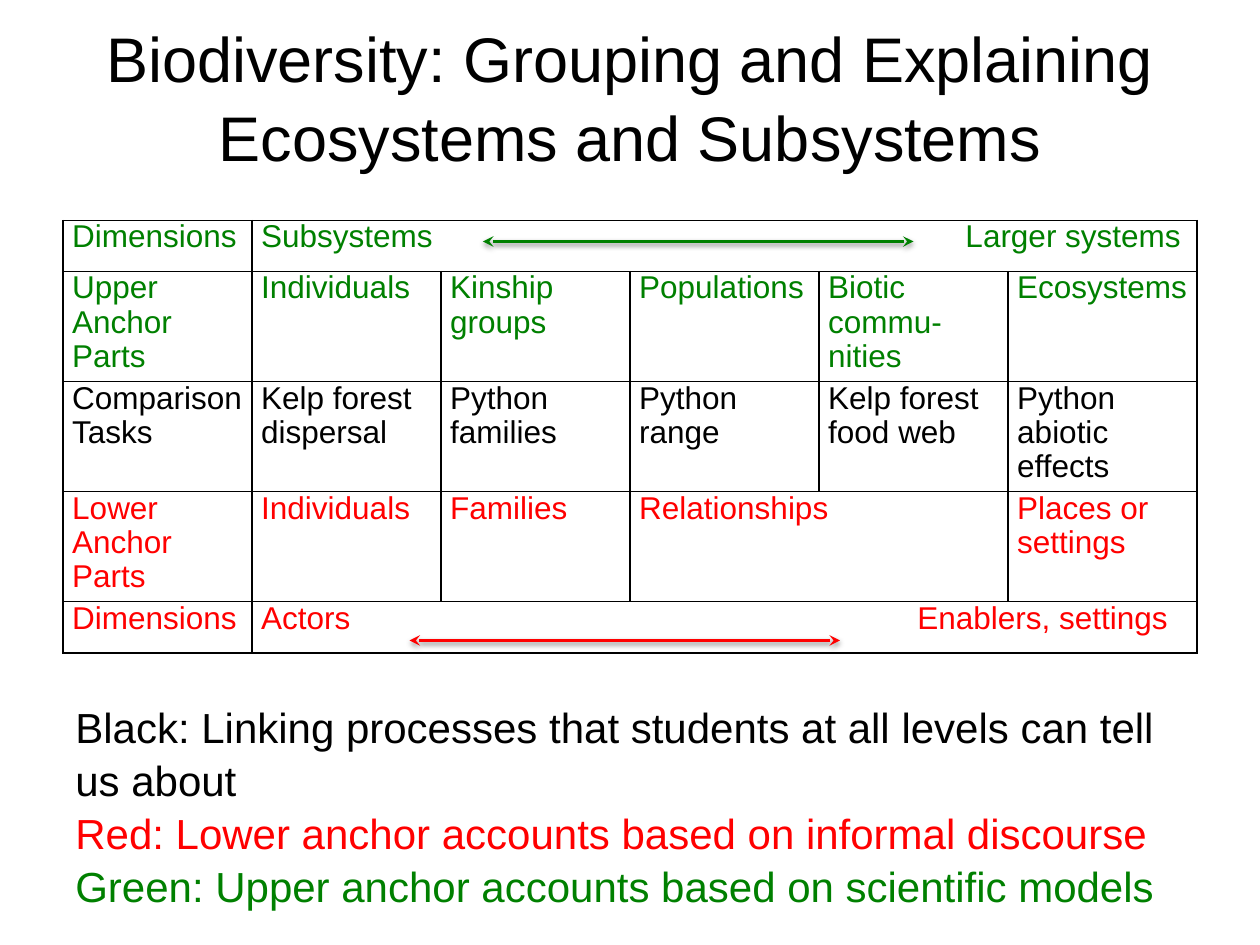
"""Build a slide that compares upper and lower anchor views of biodiversity."""
from lxml.etree import SubElement
from pptx import Presentation
from pptx.dml.color import RGBColor
from pptx.enum.shapes import MSO_CONNECTOR
from pptx.enum.text import MSO_ANCHOR, PP_ALIGN
from pptx.oxml import parse_xml
from pptx.oxml.ns import nsdecls, qn
from pptx.util import Pt

BLACK = RGBColor(0x00, 0x00, 0x00)
RED = RGBColor(0xFF, 0x00, 0x00)
GREEN = RGBColor(0x00, 0x80, 0x00)

COLUMN_WIDTH = 108
ROW_HEIGHTS = [29.2, 60.4, 60.4, 60.4, 29.2]
ROWS = [
    (GREEN, ["Dimensions", "Subsystems\tLarger systems"]),
    (GREEN, ["Upper Anchor Parts", "Individuals", "Kinship groups",
             "Populations", "Biotic commu-nities", "Ecosystems"]),
    (BLACK, ["Comparison Tasks", "Kelp forest dispersal", "Python families",
             "Python range", "Kelp forest food web", "Python abiotic effects"]),
    (RED, ["Lower Anchor Parts", "Individuals", "Families", "Relationships",
           None, "Places or settings"]),
    (RED, ["Dimensions", "Actors\tEnablers, settings"]),
]
MERGES = [(0, 1, 5), (3, 3, 4), (4, 1, 5)]
RIGHT_TABS = {0: 525.5, 4: 518}
LEGEND = [
    ("Black: Linking processes that students at all levels can tell us about", BLACK),
    ("Red: Lower anchor accounts based on informal discourse", RED),
    ("Green: Upper anchor accounts based on scientific models", GREEN),
]


def write_text(frame, text, color=BLACK, size=18, align=PP_ALIGN.LEFT,
               spacing=1.0, right_tab=None, append=False):
    paragraph = frame.add_paragraph() if append else frame.paragraphs[0]
    if right_tab:
        tabs = SubElement(paragraph._p.get_or_add_pPr(), qn("a:tabLst"))
        SubElement(tabs, qn("a:tab"), pos=str(Pt(right_tab)), algn="r")
    paragraph.alignment = align
    paragraph.line_spacing = spacing
    run = paragraph.add_run()
    run.text = text
    run.font.name = "Arial"
    run.font.size = Pt(size)
    run.font.color.rgb = color


def add_text_frame(slide, left, top, width, height, anchor=MSO_ANCHOR.TOP):
    frame = slide.shapes.add_textbox(
        Pt(left), Pt(top), Pt(width), Pt(height)).text_frame
    frame.word_wrap = True
    frame.vertical_anchor = anchor
    return frame


def format_cell(cell):
    cell.margin_left = cell.margin_right = Pt(5.3)
    cell.margin_top = cell.margin_bottom = Pt(0)
    properties = cell._tc.get_or_add_tcPr()
    for side in ("lnL", "lnR", "lnT", "lnB"):
        properties.append(parse_xml(
            f'<a:{side} {nsdecls("a")} w="{Pt(1)}"><a:solidFill>'
            f'<a:srgbClr val="{BLACK}"/></a:solidFill></a:{side}>'))
    cell.fill.background()


def add_comparison_table(slide):
    table = slide.shapes.add_table(
        len(ROWS), 6, Pt(36), Pt(126), Pt(6 * COLUMN_WIDTH),
        Pt(sum(ROW_HEIGHTS))).table
    table.first_row = table.horz_banding = False
    for column in table.columns:
        column.width = Pt(COLUMN_WIDTH)
    for row, height in zip(table.rows, ROW_HEIGHTS):
        row.height = Pt(height)
    for cell in table.iter_cells():
        format_cell(cell)
    for row, first, last in MERGES:
        table.cell(row, first).merge(table.cell(row, last))
    for row, (color, labels) in enumerate(ROWS):
        for column, label in enumerate(labels):
            if label:
                write_text(table.cell(row, column).text_frame, label, color=color,
                           spacing=0.97,
                           right_tab=RIGHT_TABS.get(row) if column else None)


def add_range_arrow(slide, left, y, color):
    arrow = slide.shapes.add_connector(
        MSO_CONNECTOR.STRAIGHT, Pt(left), Pt(y), Pt(left + 246), Pt(y))
    arrow.line.color.rgb = color
    arrow.line.width = Pt(2)
    outline = arrow.line._get_or_add_ln()
    for end in ("a:headEnd", "a:tailEnd"):
        SubElement(outline, qn(end), type="stealth")
    arrow._element.spPr.append(parse_xml(
        f'<a:effectLst {nsdecls("a")}><a:outerShdw blurRad="{Pt(3.1)}" '
        f'dist="{Pt(1.6)}" dir="5400000" rotWithShape="0">'
        f'<a:srgbClr val="{BLACK}"><a:alpha val="38000"/></a:srgbClr>'
        '</a:outerShdw></a:effectLst>'))


def main():
    presentation = Presentation()
    presentation.slide_width, presentation.slide_height = Pt(720), Pt(540)
    slide = presentation.slides.add_slide(presentation.slide_layouts[6])

    title = add_text_frame(slide, 36, 12.2, 648, 84.2, anchor=MSO_ANCHOR.MIDDLE)
    write_text(title, "Biodiversity: Grouping and Explaining Ecosystems and Subsystems",
               size=36, align=PP_ALIGN.CENTER, spacing=1.05)

    add_comparison_table(slide)

    legend = add_text_frame(slide, 36, 396, 642, 124)
    for index, (text, color) in enumerate(LEGEND):
        write_text(legend, text, color=color, size=24, spacing=1.05,
                   append=index > 0)

    add_range_arrow(slide, 276, 138, GREEN)
    add_range_arrow(slide, 234, 366, RED)
    presentation.save("out.pptx")


if __name__ == "__main__":
    main()
